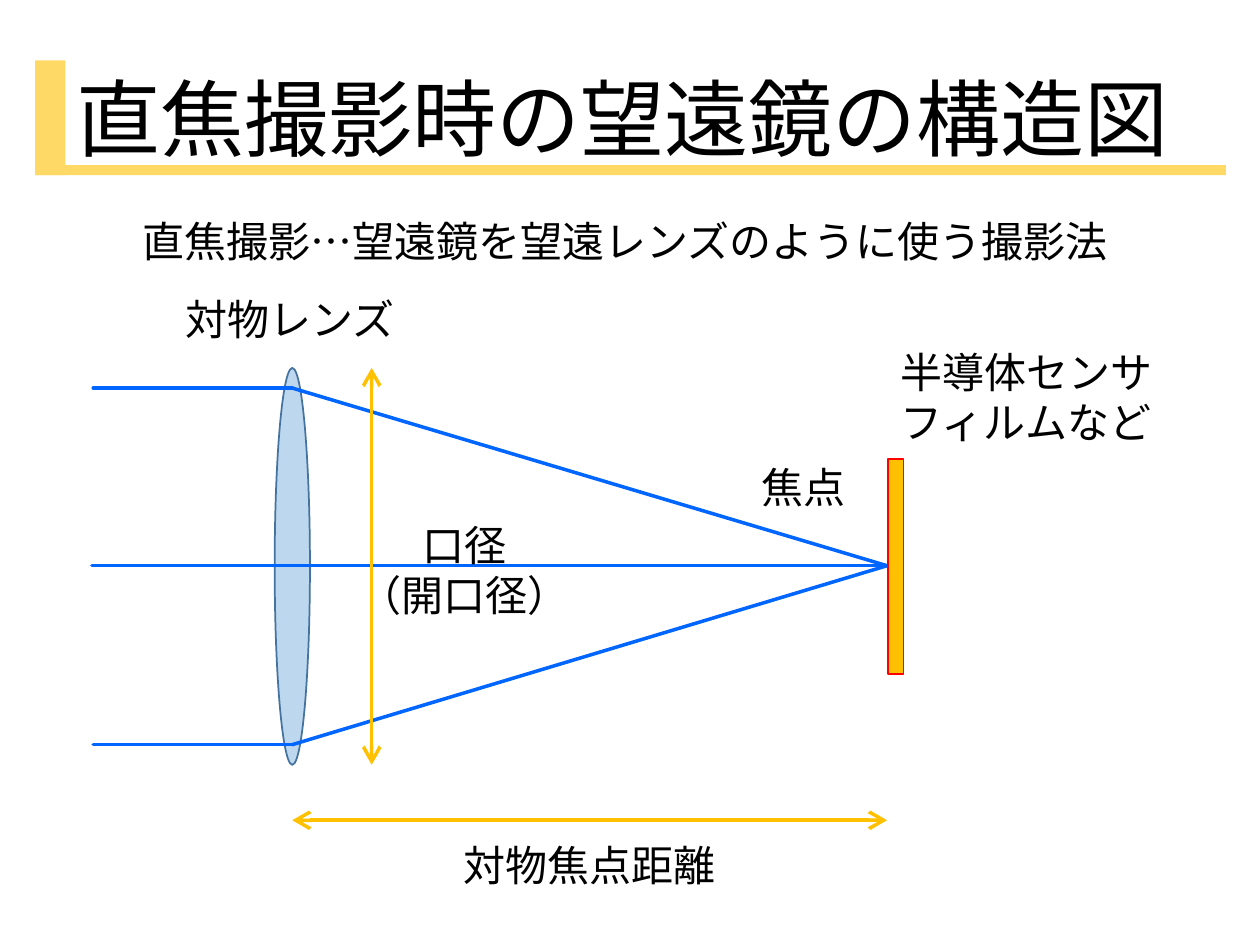
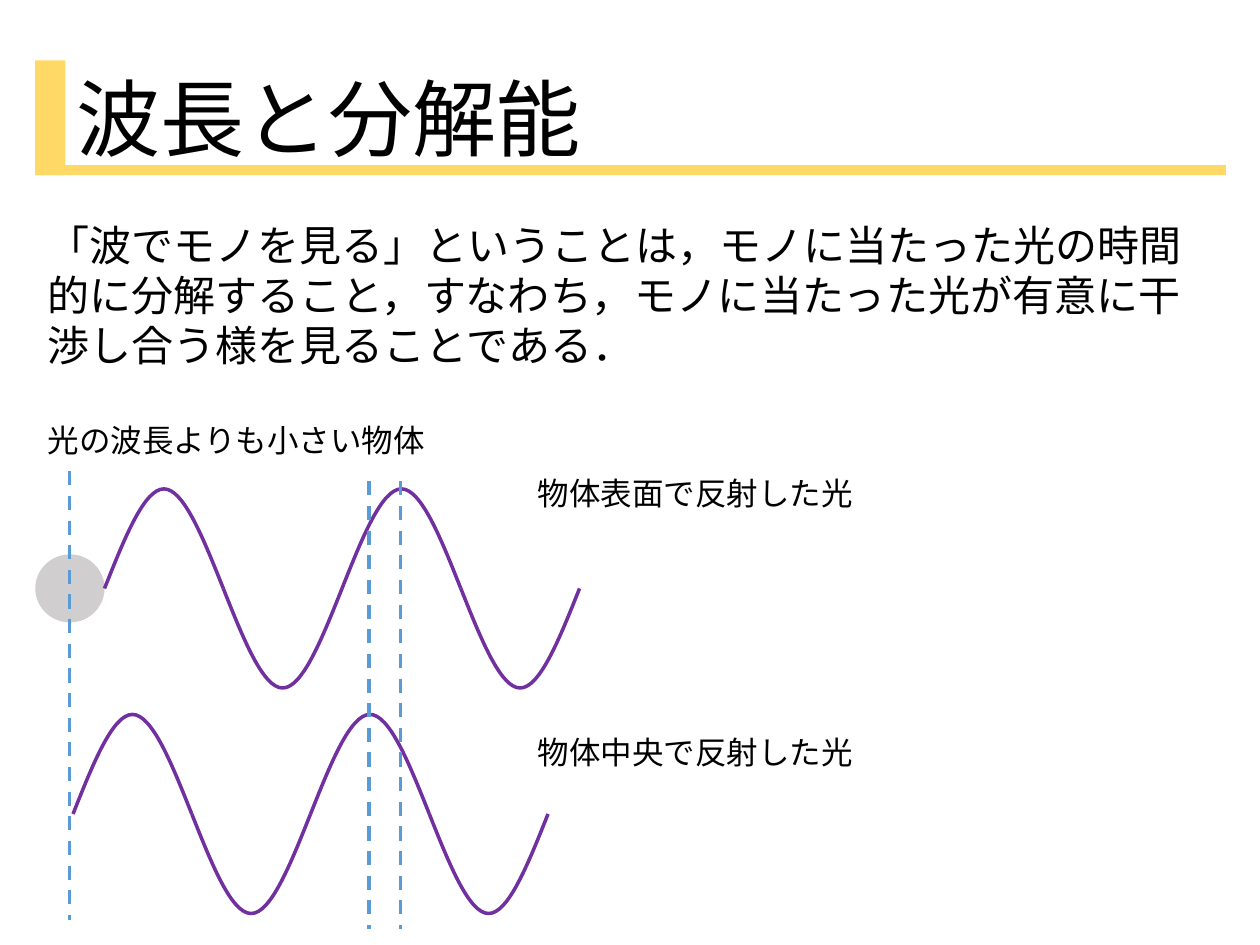
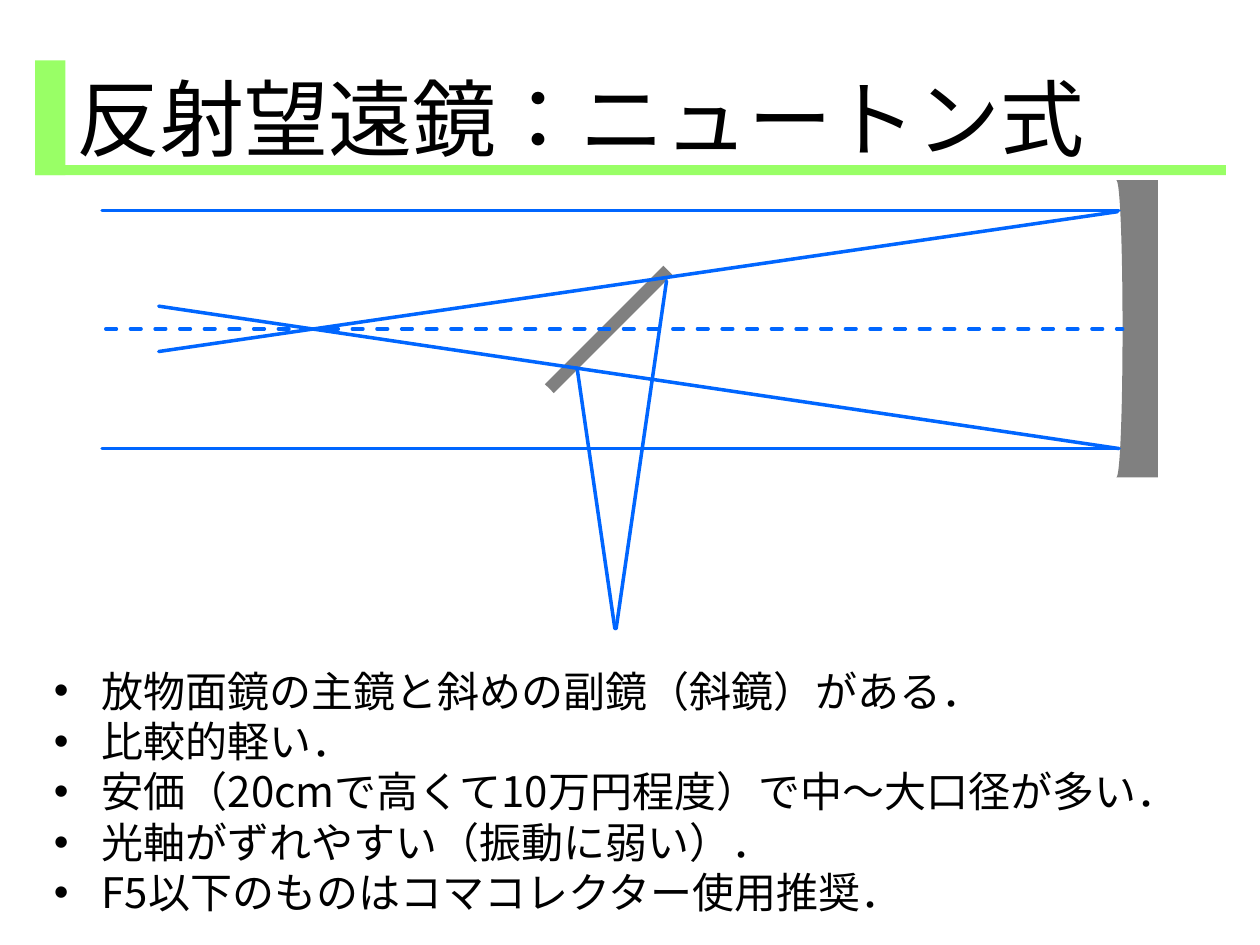
from pptx import Presentation
from pptx.dml.color import RGBColor
from pptx.enum.dml import MSO_LINE
from pptx.enum.lang import MSO_LANGUAGE_ID
from pptx.enum.shapes import MSO_CONNECTOR, MSO_SHAPE
from pptx.enum.text import MSO_AUTO_SIZE, PP_ALIGN
from pptx.oxml import parse_xml
from pptx.oxml.ns import nsdecls, qn
from pptx.util import Inches, Pt

FONT = "Noto Sans CJK JP"
RAY, AMBER, GREY = "0066FF", "FFC000", "808080"
YELLOW, GREEN = "FFD966", "99FF66"
WAVE, GUIDE = "7030A0", "5B9BD5"
LEFT, CENTER = PP_ALIGN.LEFT, PP_ALIGN.CENTER
color = RGBColor.from_string


def style(sp, fill=None, line=None, width=2, dash=False, arrows=False):
    """Set fill and outline of a shape or connector, without a shadow."""
    if fill:
        sp.fill.solid()
        sp.fill.fore_color.rgb = color(fill)
    elif hasattr(sp, "fill"):
        sp.fill.background()
    if line:
        sp.line.color.rgb = color(line)
        sp.line.width = Pt(width)
    else:
        sp.line.fill.background()
    if dash:
        sp.line.dash_style = MSO_LINE.DASH
    props = sp._element.spPr
    ln = props.find(qn("a:ln"))
    if line == RAY:
        ln.set("cap", "rnd")
    if arrows:
        for end in ("headEnd", "tailEnd"):
            ln.append(parse_xml(
                f'<a:{end} {nsdecls("a")} type="arrow" w="lg" len="lg"/>'))
    props.append(parse_xml(f'<a:effectLst {nsdecls("a")}/>'))


def write(s, box, lines, size=24, align=LEFT, wrap=False, bullet=False):
    """Add a text box with one paragraph for each line."""
    tf = s.shapes.add_textbox(*map(Inches, box)).text_frame
    tf.word_wrap = wrap
    tf.auto_size = MSO_AUTO_SIZE.SHAPE_TO_FIT_TEXT
    for i, line in enumerate(lines):
        p = tf.paragraphs[0] if i == 0 else tf.add_paragraph()
        p.alignment = align
        p.line_spacing = Pt(size * 1.2)
        r = p.add_run()
        r.text = line
        font = {"name": FONT, "size": Pt(size),
                "language_id": MSO_LANGUAGE_ID.JAPANESE}
        for key, value in font.items():
            setattr(r.font, key, value)
        r.font.color.rgb = color("000000")
        r._r.get_or_add_rPr().append(
            parse_xml(f'<a:ea {nsdecls("a")} typeface="{FONT}"/>'))
        if bullet:
            pr = p._p.get_or_add_pPr()
            pr.set("marL", str(Inches(0.38)))
            pr.set("indent", str(-Inches(0.38)))
            pr.append(parse_xml(f'<a:buFont {nsdecls("a")} typeface="Arial"/>'))
            pr.append(parse_xml(f'<a:buChar {nsdecls("a")} char="•"/>'))


prs = Presentation()
prs.slide_width, prs.slide_height = Inches(10), Inches(7.5)

# Slides with their title and L-shaped band
slides = []
for title, width, band in [
    ("直焦撮影時の望遠鏡の構造図", 8.95, YELLOW),
    ("波長と分解能", 4.24, YELLOW),
    ("反射望遠鏡：ニュートン式", 8.28, GREEN),
]:
    s = prs.slides.add_slide(prs.slide_layouts[6])
    write(s, (0.51, 0.48, width, 0.91), [title], size=48)
    for box in [(0.28, 0.48, 0.24, 0.91), (0.28, 1.31, 9.45, 0.08)]:
        style(s.shapes.add_shape(MSO_SHAPE.RECTANGLE, *map(Inches, box)), band)
    slides.append(s)
structure, resolution, newton = slides

# Slide 1: lens, sensor, rays and dimension arrows
s = structure
lens_x, focus_x, axis_y = 2.32, 7.04, 4.49
top_y, bottom_y = 3.08, 5.91
sp = s.shapes.add_shape(MSO_SHAPE.OVAL, *map(Inches, (2.18, 2.92, 0.28, 3.15)))
style(sp, "BDD7EE", "43739E", 1)
for ends, look in [
    ((0.74, top_y, lens_x, top_y), {"line": RAY}),
    ((0.74, bottom_y, lens_x, bottom_y), {"line": RAY}),
    ((lens_x, top_y, focus_x, axis_y), {"line": RAY}),
    ((focus_x, axis_y, lens_x, bottom_y), {"line": RAY}),
    ((0.73, axis_y, focus_x, axis_y), {"line": RAY}),
    ((focus_x, 6.51, lens_x, 6.51), {"line": AMBER, "arrows": True}),
    ((2.95, 2.92, 2.95, 6.07), {"line": AMBER, "arrows": True}),
]:
    style(s.shapes.add_connector(MSO_CONNECTOR.STRAIGHT, *map(Inches, ends)), **look)
sp = s.shapes.add_shape(MSO_SHAPE.RECTANGLE, *map(Inches, (7.05, 3.64, 0.12, 1.71)))
style(sp, AMBER, "FF0000", 1)

# Slide 1: labels
for box, lines, align in [
    ((1.36, 2.28, 1.88, 0.5), ["対物レンズ"], CENTER),
    ((3.57, 6.61, 2.22, 0.5), ["対物焦点距離"], CENTER),
    ((5.94, 3.61, 0.88, 0.5), ["焦点"], CENTER),
    ((2.75, 4.07, 1.88, 0.91), ["口径", "（開口径）"], CENTER),
    ((7.05, 2.7, 2.22, 0.91), ["半導体センサ", "フィルムなど"], LEFT),
    ((1.03, 1.66, 7.94, 0.5), ["直焦撮影…望遠鏡を望遠レンズのように使う撮影法"], LEFT),
]:
    write(s, box, lines, align=align)

# Slide 2: object and explanations
s = resolution
sp = s.shapes.add_shape(MSO_SHAPE.OVAL, *map(Inches, (0.28, 4.4, 0.55, 0.54)))
style(sp, "D0CECE")
write(s, (0.28, 1.69, 9.45, 1.31),
      ["「波でモノを見る」ということは，モノに当たった光の時間的に分解すること，"
       "すなわち，モノに当たった光が有意に干渉し合う様を見ることである．"], wrap=True)
for box, line in [
    ((0.28, 3.29, 3.23, 0.4), "光の波長よりも小さい物体"),
    ((4.17, 3.71, 2.73, 0.4), "物体表面で反射した光"),
    ((4.17, 5.77, 2.73, 0.4), "物体中央で反射した光"),
]:
    write(s, box, [line], size=18)

# Slide 2: two sine waves, each of four half waves
curves = []
sixth, height = 3.77 / 24, 0.79
rises = [0, 0.5, 1, 1, 1, 0.5, 0]
for start_x, mid_y in [(0.58, 6.46), (0.83, 4.67)]:
    for n in range(4):
        points = [(Inches(start_x + sixth * (6 * n + k)),
                   Inches(mid_y - (-1) ** n * height * rise))
                  for k, rise in enumerate(rises)]
        outline = s.shapes.build_freeform(*points[0])
        outline.add_line_segments(points[1:], close=False)
        sp = outline.convert_to_shape()
        style(sp, line=WAVE)
        curves.append(sp)

# Slide 2: dashed guides
for x, top, bottom in [(2.93, 3.82, 7.37), (3.18, 3.82, 7.37), (0.55, 3.74, 7.3)]:
    ends = map(Inches, (x, top, x, bottom))
    style(s.shapes.add_connector(MSO_CONNECTOR.STRAIGHT, *ends), line=GUIDE, dash=True)

# Slide 3: concave main mirror and diagonal mirror
s = newton
axis_y, top_y, bottom_y = 2.61, 1.43, 3.79
points = [(8.86, bottom_y), (8.89, bottom_y), (8.91, 3.26), (8.91, axis_y),
          (8.91, 1.96), (8.89, top_y), (8.86, top_y)]
points += [(x, top_y) for x in (8.93, 9.1, 9.19)]
points += [(x, bottom_y) for x in (9.19, 9.1, 8.93)]
points = [(Inches(x), Inches(y)) for x, y in points]
outline = s.shapes.build_freeform(*points[0])
outline.add_line_segments(points[1:], close=True)
sp = outline.convert_to_shape()
style(sp, GREY)
curves.append(sp)
sp = s.shapes.add_shape(MSO_SHAPE.RECTANGLE, *map(Inches, (4.78, 1.95, 0.1, 1.33)))
sp.rotation = 45
style(sp, GREY)

# Slide 3: rays and dashed optical axis
for *ends, dash in [
    (0.81, 1.67, 8.88, 1.67, False),
    (0.81, 3.56, 8.88, 3.56, False),
    (1.26, 2.79, 8.87, 1.68, False),
    (1.26, 2.43, 8.88, 3.56, False),
    (0.84, axis_y, 8.91, axis_y, True),
    (4.58, 2.92, 4.88, 4.99, False),
    (4.89, 4.99, 5.29, 2.23, False),
]:
    sp = s.shapes.add_connector(MSO_CONNECTOR.STRAIGHT, *map(Inches, ends))
    style(sp, line=RAY, dash=dash)

# Slide 3: features
write(s, (0.33, 5.23, 9.33, 2.12), [
    "放物面鏡の主鏡と斜めの副鏡（斜鏡）がある．",
    "比較的軽い．",
    "安価（20cmで高くて10万円程度）で中～大口径が多い．",
    "光軸がずれやすい（振動に弱い）．",
    "F5以下のものはコマコレクター使用推奨．",
], bullet=True)

# Bend the first six segments of each curve into two Bezier arcs
for sp in curves:
    segments = list(sp._element.iter(qn("a:lnTo")))
    for first in (0, 3):
        arc = parse_xml(f'<a:cubicBezTo {nsdecls("a")}/>')
        segments[first].addprevious(arc)
        for segment in segments[first:first + 3]:
            arc.append(segment[0])
            segment.getparent().remove(segment)

prs.save("out.pptx")
